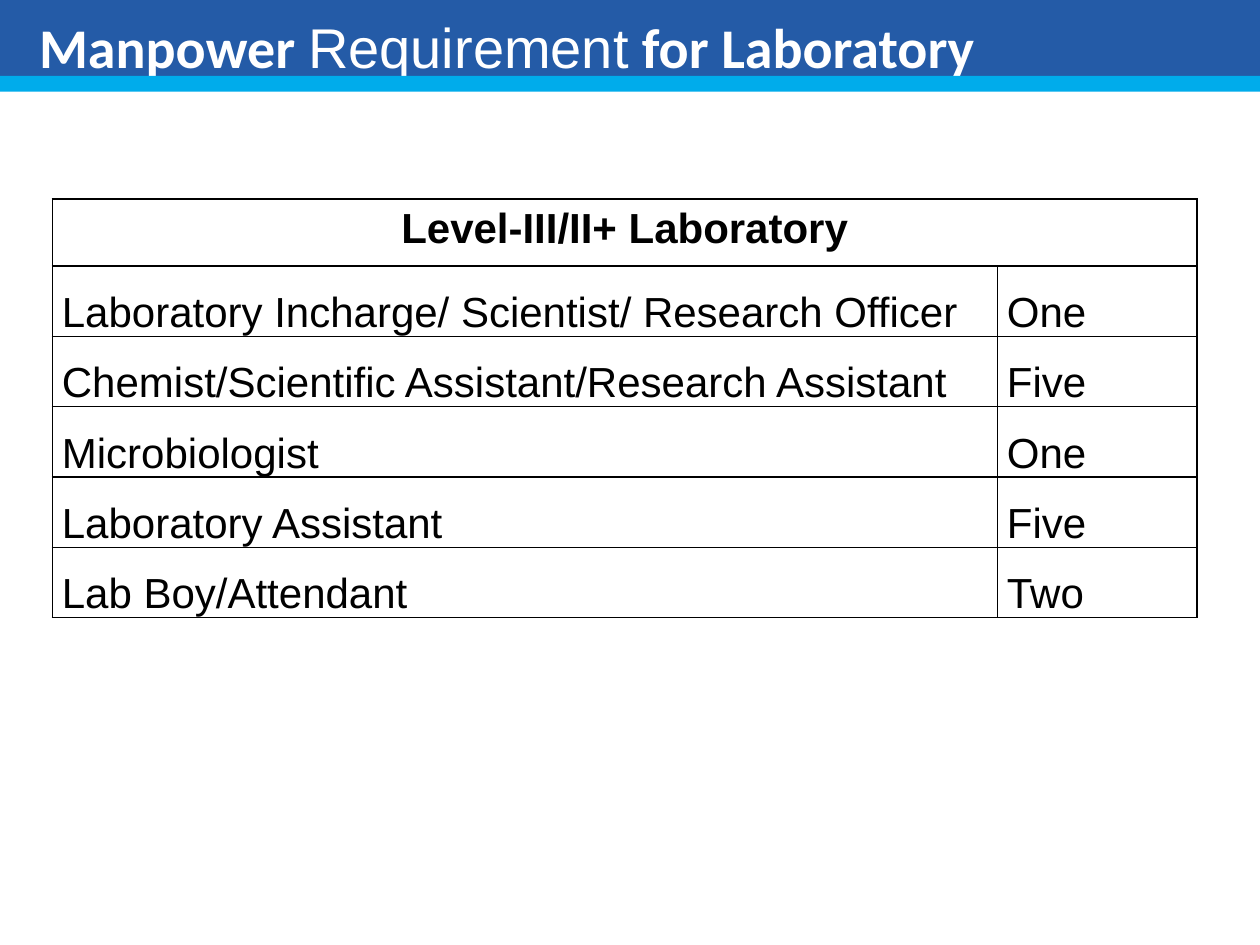
from pptx import Presentation
from pptx.dml.color import RGBColor
from pptx.enum import shapes, text
from pptx.oxml import parse_xml
from pptx.oxml.ns import nsdecls
from pptx.util import Pt

COLORS = {"title": "245BA7", "stripe": "00ACEB", "white": "FFFFFF", "black": "000000"}
TITLE = [("Manpower ", "Calibri", True), ("Requirement", "Arial", False),
         (" for Laboratory", "Calibri", True)]
HEADING = "Level-III/II+ Laboratory"
STAFF = [("Laboratory Incharge/ Scientist/ Research Officer", "One"),
         ("Chemist/Scientific Assistant/Research Assistant", "Five"),
         ("Microbiologist", "One"),
         ("Laboratory Assistant", "Five"),
         ("Lab Boy/Attendant", "Two")]


def rgb(name):
    return RGBColor.from_string(COLORS[name])


def paint(obj, name):
    obj.fill.solid()
    obj.fill.fore_color.rgb = rgb(name)


def place(s, left, top, width, height):
    s.left, s.top, s.width, s.height = Pt(left), Pt(top), Pt(width), Pt(height)


def add_title(slide, left, top, width, height):
    s = slide.shapes.title
    place(s, left, top, width, height)
    paint(s, "title")
    tf = s.text_frame
    tf.auto_size = text.MSO_AUTO_SIZE.NONE
    tf.word_wrap = True
    tf.vertical_anchor = text.MSO_ANCHOR.TOP
    tf.margin_left, tf.margin_top = Pt(22.3), Pt(10)
    tf.margin_right = tf.margin_bottom = 0
    p = tf.paragraphs[0]
    p.alignment = text.PP_ALIGN.LEFT
    p.font.size = Pt(32)
    p.font.color.rgb = rgb("white")
    for words, font, bold in TITLE:
        r = p.add_run()
        r.text, r.font.name, r.font.bold = words, font, bold


def add_stripe(slide, left, top, width, height):
    s = slide.shapes.add_shape(shapes.MSO_SHAPE.RECTANGLE,
                               Pt(left), Pt(top), Pt(width), Pt(height))
    paint(s, "stripe")
    s.line.fill.background()
    s.shadow.inherit = False


def add_borders(cell):
    """Draw a 1 pt black line on all four sides of the cell."""
    tc_pr = cell._tc.get_or_add_tcPr()
    for i, side in enumerate(("lnL", "lnR", "lnT", "lnB")):
        tc_pr.insert(i, parse_xml(
            f'<a:{side} {nsdecls("a")} w="{Pt(1)}"><a:solidFill>'
            f'<a:srgbClr val="{COLORS["black"]}"/></a:solidFill></a:{side}>'))


def fill_cell(cell, words, heading=False):
    paint(cell, "white")
    add_borders(cell)
    cell.text = words
    p = cell.text_frame.paragraphs[0]
    p.font.name, p.font.size, p.font.bold = "Arial", Pt(24), heading
    p.font.color.rgb = rgb("black")
    if heading:
        p.alignment = text.PP_ALIGN.CENTER
    else:
        p.line_spacing = 1.5
        cell.margin_left = cell.margin_right = Pt(5.4)
        cell.margin_top = cell.margin_bottom = 0


def add_staff_table(slide, left, top, width, height, count_width=114):
    table = slide.shapes.add_table(len(STAFF) + 1, 2, Pt(left), Pt(top),
                                   Pt(width), Pt(height)).table
    table.first_row = table.horz_banding = False
    table.columns[0].width = Pt(width - count_width)
    table.columns[1].width = Pt(count_width)
    table.cell(0, 0).merge(table.cell(0, 1))
    fill_cell(table.cell(0, 0), HEADING, heading=True)
    add_borders(table.cell(0, 1))
    for row, entry in enumerate(STAFF, 1):
        for col, words in enumerate(entry):
            fill_cell(table.cell(row, col), words)


def main():
    prs = Presentation()
    prs.slide_width, prs.slide_height = Pt(720), Pt(540)
    slide = prs.slides.add_slide(prs.slide_layouts[5])
    add_title(slide, 0, -3, 720, 49)
    add_stripe(slide, 0, 43.4, 720, 9)
    add_staff_table(slide, 30, 113.8, 654, 229.5)
    prs.save("out.pptx")


if __name__ == "__main__":
    main()
